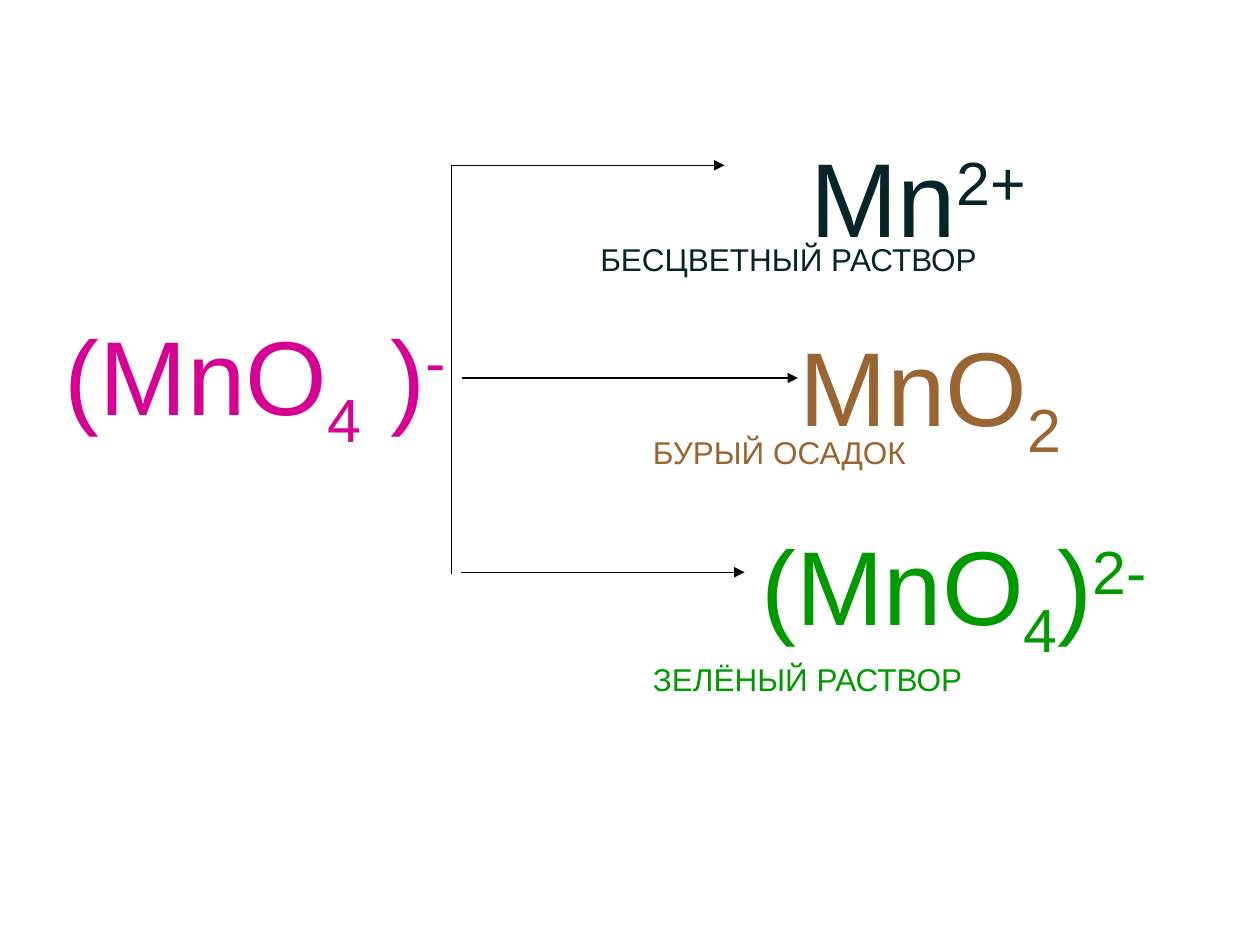
from dataclasses import dataclass

from lxml.etree import SubElement
from pptx import Presentation
from pptx.dml.color import RGBColor
from pptx.enum.shapes import MSO_CONNECTOR
from pptx.oxml.ns import qn
from pptx.util import Pt

MAGENTA = RGBColor(0xD6, 0x00, 0x93)
DARK_TEAL = RGBColor(0x07, 0x24, 0x28)
BROWN = RGBColor(0x99, 0x66, 0x33)
GREEN = RGBColor(0x00, 0x99, 0x00)
BLACK = RGBColor(0x00, 0x00, 0x00)

FONT = "Arial"
FORMULA_SIZE = 60
CAPTION_SIZE = 18
SUBSCRIPT = -25
SUPERSCRIPT = 30


@dataclass
class Piece:
    text: str
    baseline: int = 0


@dataclass
class Label:
    left: float
    top: float
    width: float
    height: float
    size: int
    color: RGBColor
    pieces: list[Piece]


@dataclass
class Line:
    start: tuple[float, float]
    end: tuple[float, float]
    arrow: bool = True


def formula(left: float, top: float, width: float, color: RGBColor,
            *pieces: Piece) -> Label:
    return Label(left, top, width, 79.2, FORMULA_SIZE, color, list(pieces))


def caption(left: float, top: float, width: float, color: RGBColor,
            text: str) -> Label:
    return Label(left, top, width, 28.8, CAPTION_SIZE, color, [Piece(text)])


def add_label(page, label: Label) -> None:
    box = page.shapes.add_textbox(Pt(label.left), Pt(label.top),
                                  Pt(label.width), Pt(label.height))
    frame = box.text_frame
    frame.word_wrap = True
    # Large text sits a tenth of its size below the usual inset
    frame.margin_top = Pt(3.6 + label.size / 10)
    para = frame.paragraphs[0]
    for piece in label.pieces:
        span = para.add_run()
        span.text = piece.text
        span.font.name = FONT
        span.font.size = Pt(label.size)
        span.font.color.rgb = label.color
        if piece.baseline:
            span.font._element.set("baseline", str(piece.baseline * 1000))


def add_line(page, line: Line) -> None:
    connector = page.shapes.add_connector(
        MSO_CONNECTOR.STRAIGHT,
        *(Pt(value) for value in line.start + line.end))
    connector.line.color.rgb = BLACK
    connector.line.width = Pt(0.75)
    if line.arrow:
        SubElement(connector.line._get_or_add_ln(), qn("a:tailEnd"),
                   type="triangle")
    SubElement(connector._element.spPr, qn("a:effectLst"))


# Branching lines: trunk, then one arrow per product
LINES = [
    Line((258, 94.5), (258, 328), arrow=False),
    Line((258, 94.5), (414, 94.5)),
    Line((264, 216), (456, 216)),
    Line((263.5, 327), (425.5, 327)),
]

LABELS = [
    # Starting ion
    formula(30, 168, 282, MAGENTA, Piece("(MnO"), Piece("4", SUBSCRIPT),
            Piece(" )"), Piece("-", SUPERSCRIPT)),
    # Products
    formula(456, 66, 204, DARK_TEAL, Piece("Mn"), Piece("2+", SUPERSCRIPT)),
    formula(450, 174, 192, BROWN, Piece("MnO"), Piece("2", SUBSCRIPT)),
    formula(428, 288, 278, GREEN, Piece("(MnO"), Piece("4", SUBSCRIPT),
            Piece(")"), Piece("2-", SUPERSCRIPT)),
    # Appearance of each product
    caption(336, 132, 318, DARK_TEAL, "БЕСЦВЕТНЫЙ РАСТВОР"),
    caption(366, 242, 294, BROWN, "БУРЫЙ ОСАДОК"),
    caption(366, 372, 282, GREEN, "ЗЕЛЁНЫЙ РАСТВОР"),
]


def main() -> None:
    deck = Presentation()
    deck.slide_width, deck.slide_height = Pt(720), Pt(540)
    page = deck.slides.add_slide(deck.slide_layouts[6])
    for line in LINES:
        add_line(page, line)
    for label in LABELS:
        add_label(page, label)
    deck.save("out.pptx")


if __name__ == "__main__":
    main()
